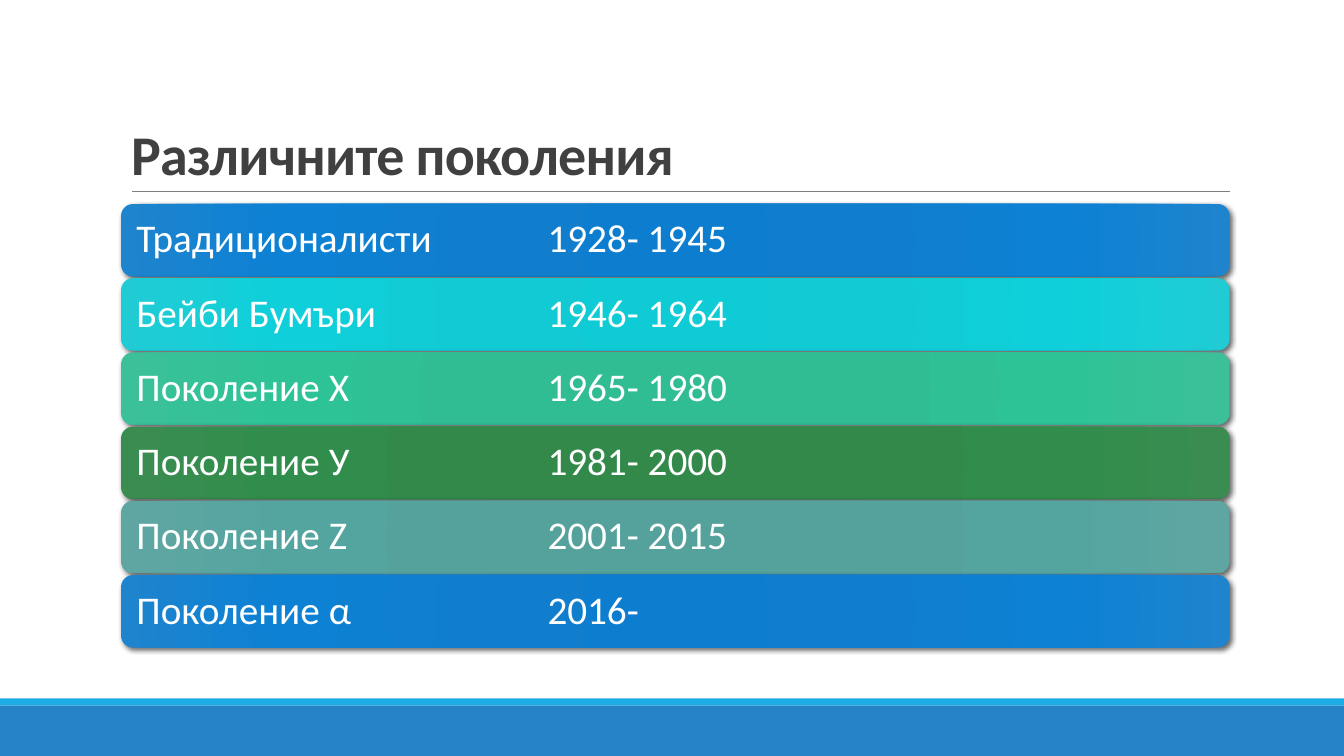
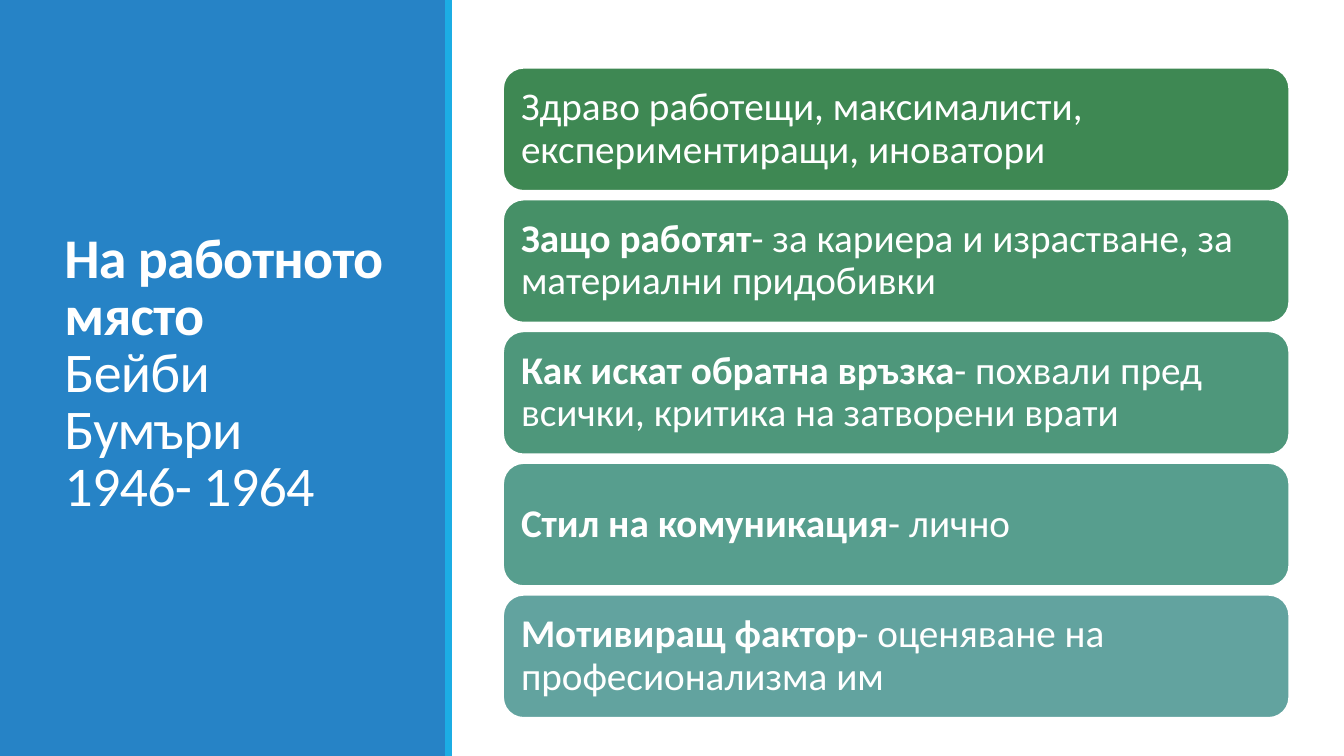
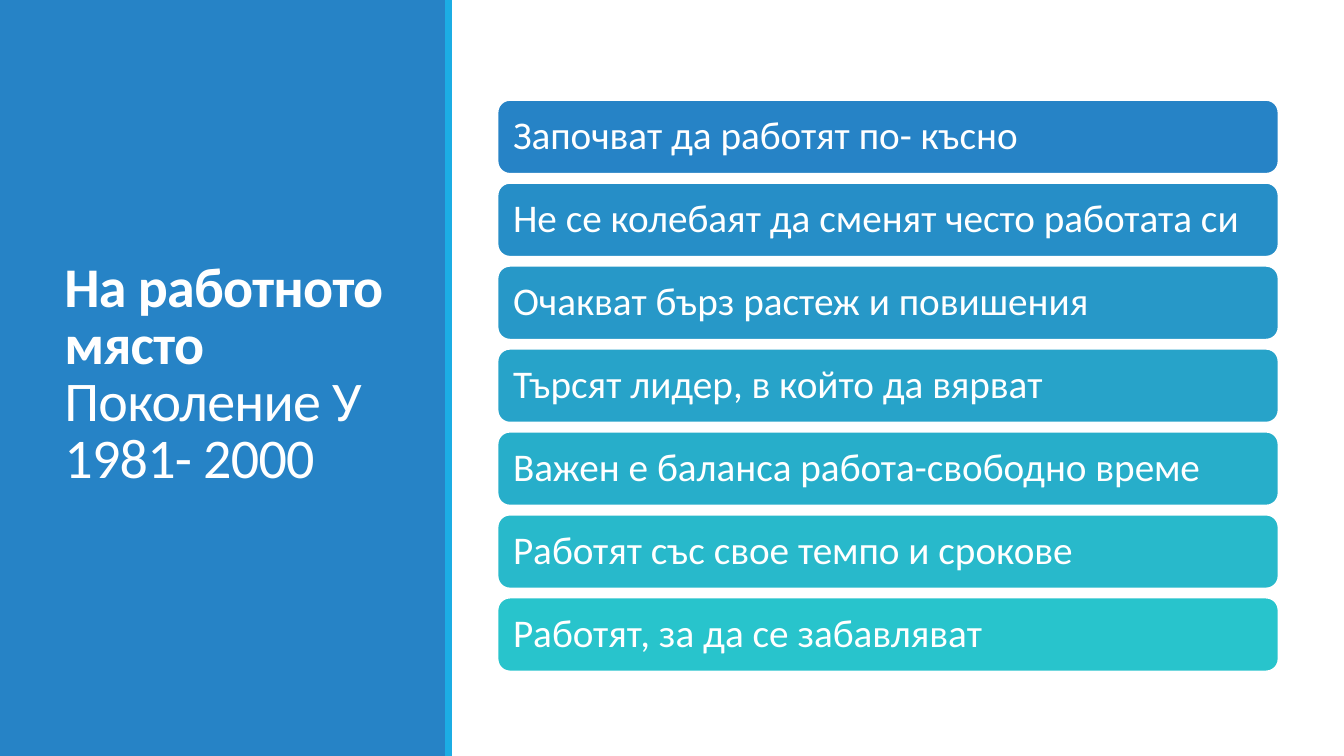
from pptx import Presentation
from pptx import util as u
from pptx.dml.color import RGBColor
from pptx.enum import shapes, text
from pptx.oxml import parse_xml
from pptx.oxml.ns import nsdecls, qn

FONT = "Calibri"
WHITE = RGBColor(0xFF, 0xFF, 0xFF)
BLUE = RGBColor(0x26, 0x83, 0xC6)
CYAN = RGBColor(0x1C, 0xAD, 0xE4)
DARK = RGBColor(0x40, 0x40, 0x40)
GRAY = RGBColor(0x80, 0x80, 0x80)

# Gradient colours at 0, 34, 70 and 100 %
STOPS = (0, 34, 70, 100)
BLUES = ("0D7ECF", "117ECD", "0D81D4", "1E84CE")
TEALS = ("0ECBD5", "12CAD3", "0FD0DA", "20CBD4")
MINTS = ("2DBE94", "30BD94", "2EC397", "3CC09A")
GREENS = ("2F8949", "32894A", "318D4B", "3A8C51")
SAGES = ("52A19C", "55A19C", "54A5A0", "5FA6A2")

# Content
GENERATIONS = [
    ("Традиционалисти", "1928- 1945", BLUES),
    ("Бейби Бумъри", "1946- 1964", TEALS),
    ("Поколение Х", "1965- 1980", MINTS),
    ("Поколение У", "1981- 2000", GREENS),
    ("Поколение Z", "2001- 2015", SAGES),
    ("Поколение α", "2016-", BLUES),
]

# Each workplace row: fill, bold lead, plain text; places in cm
WORKPLACES = [
    {
        "who": "Бейби Бумъри\v1946- 1964",
        "box": (12.68, 1.71, 19.81, 3.1),
        "pitch": 3.32,
        "rows": [
            ("3E8853", "", "Здраво работещи, максималисти, експериментиращи, иноватори"),
            ("469067", "Защо работят", "- за кариера и израстване, за материални придобивки"),
            ("4E977B", "Как искат обратна връзка",
             "- похвали пред всички, критика на затворени врати"),
            ("579E8E", "Стил на комуникация", "- лично"),
            ("62A39F", "Мотивиращ фактор", "- оценяване на професионализма им"),
        ],
    },
    {
        "who": "Поколение У 1981- 2000",
        "box": (12.54, 2.52, 19.68, 1.86),
        "pitch": 2.09,
        "rows": [
            ("2683C6", "", "Започват да работят по- късно"),
            ("268EC7", "", "Не се колебаят да сменят често работата си"),
            ("2798C8", "", "Очакват бърз растеж и повишения"),
            ("27A3C9", "", "Търсят лидер, в който да вярват"),
            ("27AECA", "", "Важен е баланса работа-свободно време"),
            ("28B9CB", "", "Работят със свое темпо и срокове"),
            ("28C4CC", "", "Работят, за да се забавляват"),
        ],
    },
]


def cm(*lengths):
    return [u.Cm(v) for v in lengths]


def add_run(p, words, size, color, bold=False):
    r = p.add_run()
    r.text = words
    r.font.name, r.font.size, r.font.bold = FONT, u.Pt(size), bold
    r.font.color.rgb = color
    return r


def add_box(s, kind, box, fill):
    sp = s.shapes.add_shape(kind, *cm(*box))
    sp.shadow.inherit = False
    sp.fill.solid()
    sp.fill.fore_color.rgb = fill
    sp.line.fill.background()
    return sp


def add_band(s, box, fill):
    """Plain colour band, kept behind the title."""
    band = add_box(s, shapes.MSO_SHAPE.RECTANGLE, box, fill)
    s.shapes.title._element.addprevious(band._element)


def add_card(s, box, fill, parts):
    """Rounded card with (words, bold) parts on one paragraph."""
    sp = add_box(s, shapes.MSO_SHAPE.ROUNDED_RECTANGLE, box, fill)
    tf = sp.text_frame
    tf.word_wrap = True
    tf.vertical_anchor = text.MSO_ANCHOR.MIDDLE
    tf.margin_left = tf.margin_right = tf.margin_top = tf.margin_bottom = u.Cm(0.3)
    p = tf.paragraphs[0]
    p.alignment = text.PP_ALIGN.LEFT
    p.line_spacing = 0.9
    for words, bold in parts:
        if words:
            add_run(p, words, 28, WHITE, bold)
    return sp


def add_gradient_and_shadow(sp, colors):
    stops = "".join(
        f'<a:gs pos="{pos * 1000}"><a:srgbClr val="{c}"/></a:gs>'
        for pos, c in zip(STOPS, colors))
    solid = sp._element.spPr.find(qn("a:solidFill"))
    solid.getparent().replace(solid, parse_xml(
        f'<a:gradFill {nsdecls("a")}><a:gsLst>{stops}</a:gsLst><a:path path="circle">'
        '<a:fillToRect l="100000" t="100000" r="100000" b="100000"/></a:path></a:gradFill>'))
    sp._element.spPr.find(qn("a:effectLst")).append(parse_xml(
        f'<a:outerShdw {nsdecls("a")} blurRad="44450" dist="25400" dir="2700000">'
        '<a:srgbClr val="000000"><a:alpha val="60000"/></a:srgbClr></a:outerShdw>'))


def add_tab(p, position):
    p._p.get_or_add_pPr().append(parse_xml(
        f'<a:tabLst {nsdecls("a")}><a:tab pos="{position}" algn="l"/></a:tabLst>'))


def new_slide(prs, box, anchor, color, parts):
    """Title-only slide with the shared title style."""
    s = prs.slides.add_slide(prs.slide_layouts[5])
    title = s.shapes.title
    title.left, title.top, title.width, title.height = cm(*box)
    tf = title.text_frame
    tf.word_wrap = True
    tf.auto_size = text.MSO_AUTO_SIZE.NONE
    tf.vertical_anchor = anchor
    p = tf.paragraphs[0]
    p.alignment = text.PP_ALIGN.LEFT
    p.line_spacing = 0.85
    for words, bold in parts:
        for i, line in enumerate(words.split("\v")):
            if i:
                p.add_line_break()
            if line:
                r = add_run(p, line, 40, color, bold)
                r.font._element.set("spc", "-50")
    return s


def build_generations(prs):
    s = new_slide(prs, (3.05, 0.79, 27.94, 4.04), text.MSO_ANCHOR.BOTTOM, DARK,
                  [("Различните поколения", True)])
    add_band(s, (0, 17.6, 33.87, 0.18), CYAN)
    add_band(s, (0, 17.78, 33.87, 1.27), BLUE)

    # Rule under the title
    rule = s.shapes.add_connector(shapes.MSO_CONNECTOR.STRAIGHT, *cm(3.33, 4.83, 31, 4.83))
    rule.line.color.rgb = GRAY
    rule.line.width = u.Pt(0.5)
    rule._element.spPr.append(parse_xml(f'<a:effectLst {nsdecls("a")}/>'))

    # One bar per generation
    for i, (name, years, colors) in enumerate(GENERATIONS):
        bar = add_card(s, (3.05, 5.14 + i * 1.87, 27.94, 1.83), BLUE,
                       [(f"{name}\t{years}", False)])
        add_tab(bar.text_frame.paragraphs[0], u.Cm(10.36))
        add_gradient_and_shadow(bar, colors)


def build_workplace(prs, page):
    s = new_slide(prs, (1.37, 1.45, 8.56, 16.03), text.MSO_ANCHOR.MIDDLE, WHITE,
                  [("На работното място\v", True), (page["who"], False)])
    add_band(s, (0, 0, 11.25, 19.05), BLUE)
    add_band(s, (11.22, 0, 0.17, 19.05), CYAN)

    # Stack of cards
    left, top, width, height = page["box"]
    for i, (fill, lead, rest) in enumerate(page["rows"]):
        card = add_card(s, (left, top + i * page["pitch"], width, height),
                        RGBColor.from_string(fill), [(lead, True), (rest, False)])
        card.line.color.rgb = WHITE
        card.line.width = u.Pt(1.25)


def main():
    prs = Presentation()
    prs.slide_width, prs.slide_height = cm(33.87, 19.05)
    build_generations(prs)
    for page in WORKPLACES:
        build_workplace(prs, page)
    prs.save("out.pptx")


if __name__ == "__main__":
    main()
